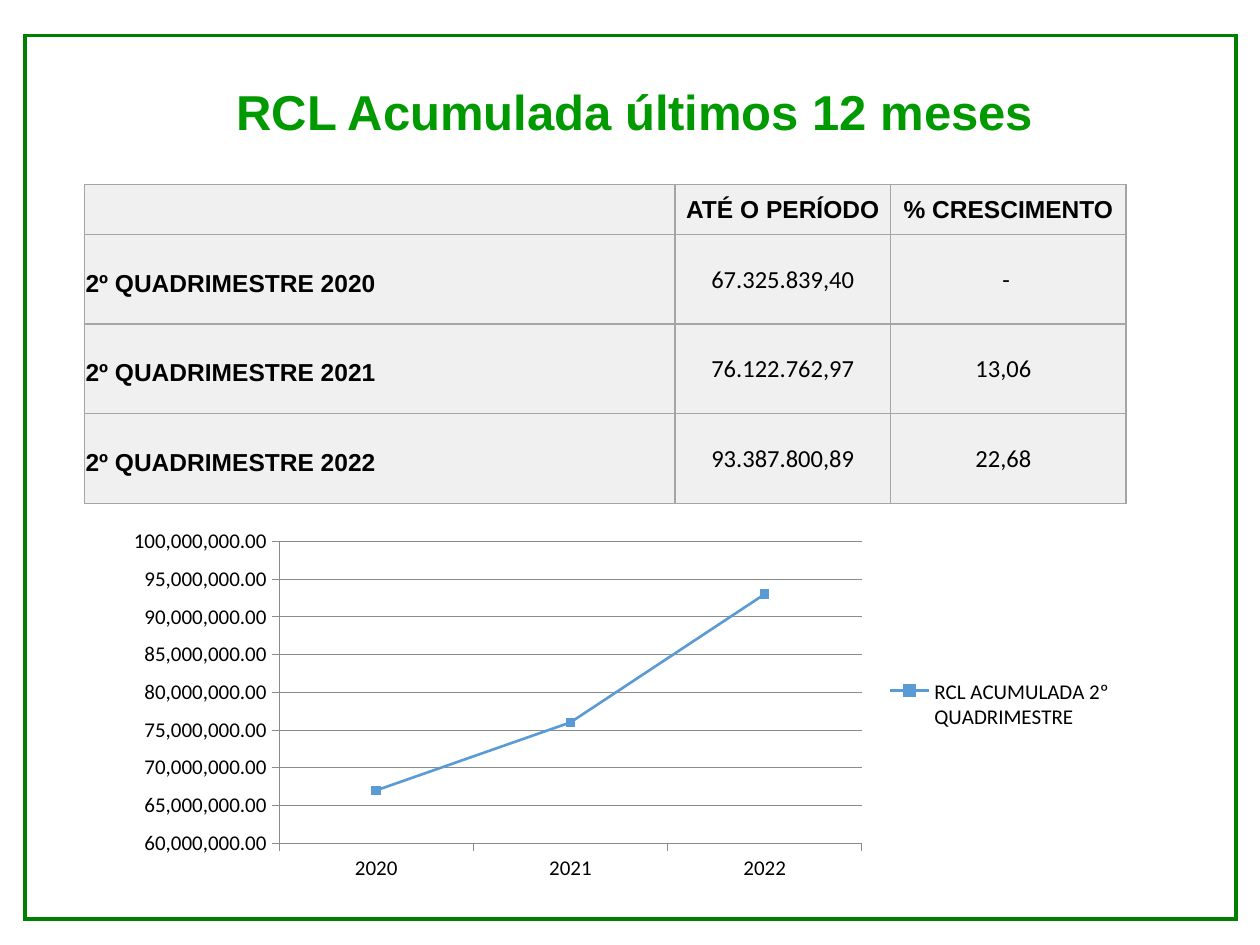
from lxml.etree import SubElement as Sub
from pptx import Presentation
from pptx.chart.data import CategoryChartData as Data
from pptx.dml.color import RGBColor as RGB
from pptx.enum.chart import XL_CHART_TYPE as Kind, XL_LEGEND_POSITION as Pos
from pptx.enum.chart import XL_MARKER_STYLE as Mark, XL_TICK_MARK as Tick
from pptx.enum.shapes import MSO_SHAPE as Form
from pptx.enum.text import MSO_ANCHOR as Anchor, PP_ALIGN as Align
from pptx.oxml import parse_xml
from pptx.oxml.ns import nsdecls, qn
from pptx.util import Pt

# Content
TITLE = "RCL Acumulada últimos 12 meses"
HEAD = ["", "ATÉ O PERÍODO", "% CRESCIMENTO"]
ROWS = [
    ["2º QUADRIMESTRE 2020", " 67.325.839,40 ", " -"],
    ["2º QUADRIMESTRE 2021", " 76.122.762,97 ", "13,06"],
    ["2º QUADRIMESTRE 2022", " 93.387.800,89 ", "22,68"],
]
SERIES = "RCL ACUMULADA 2º QUADRIMESTRE "
POINTS = {"2020": 67000000, "2021": 76000000, "2022": 93000000}
WIDTHS = [337.5, 123.3, 134.6]
HEIGHTS = [28.5] + [51.2] * len(ROWS)
CHART_W, CHART_H = 578.2, 209.5
PLOT = {"x": 94 / CHART_W, "y": 11.3 / CHART_H,
        "w": 333 / CHART_W, "h": 172.5 / CHART_H}
GREEN, LEAF, GRAY, PALE = "008000", "009900", "A5A5A5", "F0F0F0"
BLUE, BLACK, AXIS = "5B9BD5", "000000", "8B8B8B"


def paint(part, hue):
    part.solid()
    part.fore_color.rgb = RGB.from_string(hue)


def write(frame, text, size, face, hue, bold, align):
    para = frame.paragraphs[0]
    para.alignment = align
    run = para.add_run()
    run.text = text
    font = run.font
    font.size, font.name, font.bold = Pt(size), face, bold
    paint(font.fill, hue)


def edge(cell):
    props = cell._tc.get_or_add_tcPr()
    for i, side in enumerate(("lnL", "lnR", "lnT", "lnB")):
        props.insert(i, parse_xml(
            f'<a:{side} {nsdecls("a")} w="{Pt(1)}"><a:solidFill>'
            f'<a:srgbClr val="{GRAY}"/></a:solidFill></a:{side}>'))


def fill_cell(cell, text, row, col):
    label = row > 0 and col == 0
    paint(cell.fill, PALE)
    edge(cell)
    cell.vertical_anchor = Anchor.MIDDLE
    cell.margin_left = Pt(0.7)
    cell.margin_right = Pt(6.5 if row and col != 1 else 0.7)
    cell.margin_top, cell.margin_bottom = Pt(5 if label else 0.7), 0
    if text:
        strong = row == 0 or label
        write(cell.text_frame, text, 14, "Arial" if strong else "Calibri",
              BLACK, strong, Align.JUSTIFY if label else Align.CENTER)


deck = Presentation()
deck.slide_width, deck.slide_height = Pt(720), Pt(540)
slide = deck.slides.add_slide(deck.slide_layouts[6])
shapes = slide.shapes

# Frame with sharp corners
frame = shapes.add_shape(Form.RECTANGLE, Pt(14.4), Pt(20.4), Pt(692), Pt(504.7))
frame.shadow.inherit = False
frame.fill.background()
paint(frame.line.fill, GREEN)
frame.line.width = Pt(2)
Sub(frame.line._get_or_add_ln(), qn("a:miter")).set("lim", "800000")

# Title
title = shapes.add_textbox(Pt(76.5), Pt(43.2), Pt(572.4), Pt(41)).text_frame
title.word_wrap = True
write(title, TITLE, 28, "Arial", LEAF, True, Align.CENTER)

# Table
grid = shapes.add_table(len(HEIGHTS), len(WIDTHS), Pt(48.2), Pt(105.5),
                        Pt(sum(WIDTHS)), Pt(sum(HEIGHTS))).table
for col, wide in zip(grid.columns, WIDTHS):
    col.width = Pt(wide)
for row, high in zip(grid.rows, HEIGHTS):
    row.height = Pt(high)
for r, line in enumerate([HEAD] + ROWS):
    for c, text in enumerate(line):
        fill_cell(grid.cell(r, c), text, r, c)

# Chart
data = Data(number_format="#,##0.00")
data.categories = list(POINTS)
data.add_series(SERIES, list(POINTS.values()))
chart = shapes.add_chart(Kind.LINE_MARKERS, Pt(65.5), Pt(298.1), Pt(CHART_W),
                         Pt(CHART_H), data).chart
chart.has_title = False
chart.font.size, chart.font.name = Pt(12), "Calibri"
paint(chart.font.fill, BLACK)
chart.has_legend = True
chart.legend.position = Pos.RIGHT
chart.legend.include_in_layout = False

plot = chart.plots[0]
plot.vary_by_categories = False
curve = plot.series[0]
curve.smooth = False
paint(curve.format.line.fill, BLUE)
curve.format.line.width = Pt(1.5)
dot = curve.marker
dot.style, dot.size = Mark.SQUARE, 5
paint(dot.format.fill, BLUE)
paint(dot.format.line.fill, BLUE)

# Axes
vals, cats = chart.value_axis, chart.category_axis
vals.minimum_scale, vals.maximum_scale = 60000000, 100000000
vals.major_unit = 5000000
vals.has_major_gridlines = True
vals.tick_labels.number_format = "#,##0.00"
vals.tick_labels.number_format_is_linked = False
for axis in (vals, cats):
    axis.major_tick_mark, axis.minor_tick_mark = Tick.OUTSIDE, Tick.NONE
for part in (vals, cats, vals.major_gridlines):
    paint(part.format.line.fill, AXIS)
    part.format.line.width = Pt(0.5)

# Plot area inside the chart
area = chart._chartSpace.chart.plotArea
for old in area.findall(qn("c:layout")):
    area.remove(old)
layout = parse_xml(f'<c:layout {nsdecls("c")}/>')
area.insert(0, layout)
manual = Sub(layout, qn("c:manualLayout"))
modes = {"layoutTarget": "inner", "xMode": "edge", "yMode": "edge"}
for tag, val in {**modes, **PLOT}.items():
    Sub(manual, qn(f"c:{tag}")).set("val", str(val))

deck.save("out.pptx")
